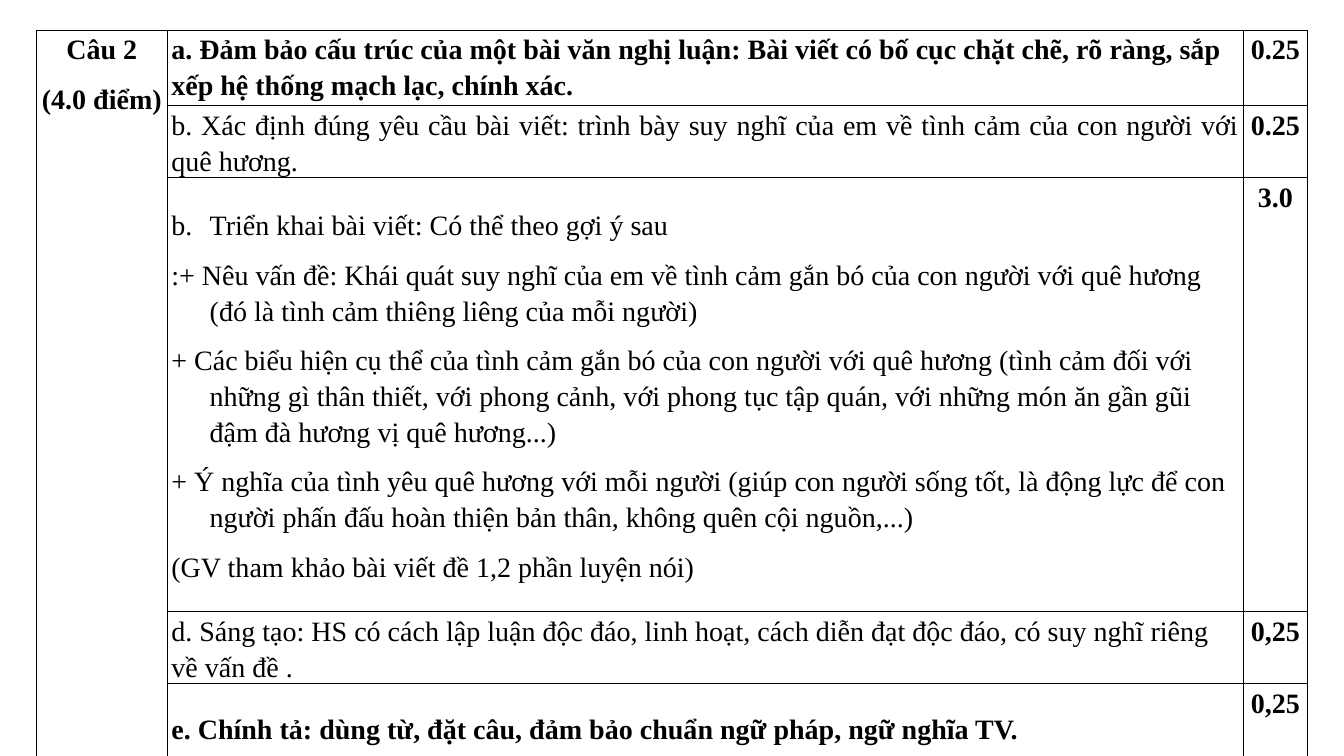
"""Build the marking guide slide for question 2."""
import pptx
import pptx.dml.color
import pptx.enum.text
import pptx.oxml
import pptx.oxml.ns
import pptx.util
from lxml import etree

Inches = pptx.util.Inches
Pt = pptx.util.Pt
Align = pptx.enum.text.PP_ALIGN
Anchor = pptx.enum.text.MSO_ANCHOR
qn = pptx.oxml.ns.qn


def color(code):
    return pptx.dml.color.RGBColor.from_string(code)


class Page:
    font = "Times New Roman"
    size = 20
    ink = "000000"
    paper = "FFFFFF"

    def __init__(self, deck):
        self.slide = deck.slides.add_slide(deck.slide_layouts[6])

    def table(self, left, top, cols, rows):
        frame = self.slide.shapes.add_table(
            len(rows), len(cols), Inches(left), Inches(top),
            Inches(sum(cols)), Inches(sum(rows)))
        grid = frame.table
        grid.first_row = grid.horz_banding = False
        for col, width in zip(grid.columns, cols):
            col.width = Inches(width)
        for row, height in zip(grid.rows, rows):
            row.height = Inches(height)
        for cell in grid.iter_cells():
            self.box(cell)
        return grid

    def box(self, cell):
        cell.margin_left = cell.margin_right = Inches(0.04)
        cell.margin_top = cell.margin_bottom = 0
        props = cell._tc.get_or_add_tcPr()
        for side in ("lnL", "lnR", "lnT", "lnB"):
            line = etree.SubElement(props, qn("a:" + side), w=str(Pt(1)))
            fill = etree.SubElement(line, qn("a:solidFill"))
            etree.SubElement(fill, qn("a:srgbClr"), val=self.ink)
        cell.fill.solid()
        cell.fill.fore_color.rgb = color(self.paper)

    def text(self, cell, lines, bold=False, align=Align.LEFT,
             anchor=Anchor.TOP, after=10, last=None, hang=0, start=None):
        cell.vertical_anchor = anchor
        frame = cell.text_frame
        for i, words in enumerate(lines):
            para = frame.add_paragraph() if i else frame.paragraphs[0]
            para.alignment = align
            para.line_spacing = 1.15
            final = i == len(lines) - 1
            para.space_after = Pt(last if final and last else after)
            props = para._p.get_or_add_pPr()
            if hang:
                props.set("marL", str(Inches(hang)))
                props.set("indent", str(-Inches(hang)))
            if start and i == 0:
                etree.SubElement(props, qn("a:buAutoNum"),
                                 type="alphaLcPeriod", startAt=str(start))
            else:
                etree.SubElement(props, qn("a:buNone"))
            tabs = etree.SubElement(props, qn("a:tabLst"))
            etree.SubElement(tabs, qn("a:tab"), pos=str(Inches(0.45)), algn="l")
            run = para.add_run()
            run.text = words
            run.font.name = self.font
            run.font.size = Pt(self.size)
            run.font.bold = bold
            run.font.color.rgb = color(self.ink)


TITLE = ["Câu 2", "(4.0 điểm) "]
TASKS = [
    (["a. Đảm bảo cấu trúc của một bài văn nghị luận: Bài viết có bố cục chặt chẽ, rõ ràng, sắp xếp hệ thống mạch lạc, chính xác."],
     "0.25", dict(bold=True)),
    (["b. Xác định đúng yêu cầu bài viết: trình bày suy nghĩ của em về tình cảm của con người với quê hương."],
     "0.25", dict(align=Align.JUSTIFY)),
    (["Triển khai bài viết: Có thể theo gợi ý sau",
      ":+ Nêu vấn đề: Khái quát suy nghĩ của em về tình cảm gắn bó của con người với quê hương (đó là tình cảm thiêng liêng của mỗi người)",
      "+ Các biểu hiện cụ thể của tình cảm gắn bó của con người với quê hương (tình cảm đối với những gì thân thiết, với phong cảnh, với phong tục tập quán, với những món ăn gần gũi đậm đà hương vị quê hương...)",
      "+ Ý nghĩa của tình yêu quê hương với mỗi người (giúp con người sống tốt, là động lực để con người phấn đấu hoàn thiện bản thân, không quên cội nguồn,...)",
      "(GV tham khảo bài viết đề 1,2 phần luyện nói)"],
     "3.0", dict(anchor=Anchor.MIDDLE, last=12, hang=0.38, start=2)),
    (["d. Sáng tạo: HS có cách lập luận độc đáo, linh hoạt, cách diễn đạt độc đáo, có suy nghĩ riêng về vấn đề ."],
     "0,25", dict(anchor=Anchor.MIDDLE, after=0)),
    (["e. Chính tả: dùng từ, đặt câu, đảm bảo chuẩn ngữ pháp, ngữ nghĩa TV."],
     "0,25", dict(bold=True, anchor=Anchor.MIDDLE, after=0)),
]


def main():
    deck = pptx.Presentation()
    deck.slide_width = Inches(13.33)
    deck.slide_height = Inches(7.5)
    page = Page(deck)
    grid = page.table(0.36, 0.3, [1.3, 10.67, 0.64],
                      [0.75, 0.71, 4.31, 0.71, 0.87])
    grid.cell(0, 0).merge(grid.cell(len(TASKS) - 1, 0))
    page.text(grid.cell(0, 0), TITLE, bold=True, align=Align.CENTER)
    for row, (lines, score, style) in enumerate(TASKS):
        page.text(grid.cell(row, 1), lines, **style)
        page.text(grid.cell(row, 2), [score], bold=True, align=Align.CENTER)
    deck.save("out.pptx")


if __name__ == "__main__":
    main()
